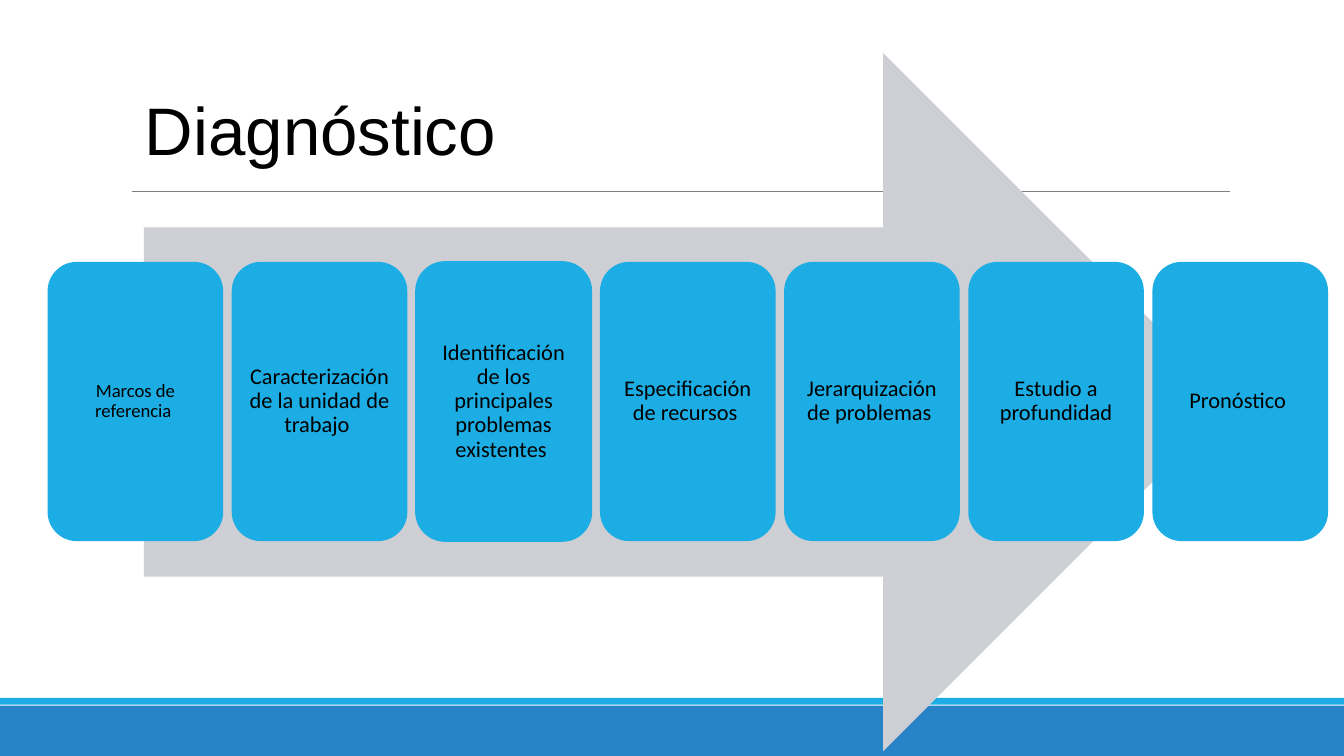
from dataclasses import dataclass

from lxml.etree import SubElement
from pptx import Presentation
from pptx.dml.color import RGBColor
from pptx.enum.shapes import MSO_CONNECTOR, MSO_SHAPE
from pptx.enum.text import MSO_ANCHOR, PP_ALIGN
from pptx.oxml.ns import qn
from pptx.util import Cm, Pt


@dataclass(frozen=True)
class Theme:
    accent: RGBColor = RGBColor(0x1C, 0xAD, 0xE4)
    footer: RGBColor = RGBColor(0x26, 0x83, 0xC6)
    arrow: RGBColor = RGBColor(0xCE, 0xCF, 0xD4)
    rule: RGBColor = RGBColor(0x80, 0x80, 0x80)
    text: RGBColor = RGBColor(0, 0, 0)
    title_font: str = "Arial"
    body_font: str = "Calibri"
    title_size: float = 36
    body_size: float = 12
    small_size: float = 10


@dataclass(frozen=True)
class Box:
    left: float
    top: float
    width: float
    height: float

    def lengths(self) -> tuple:
        return Cm(self.left), Cm(self.top), Cm(self.width), Cm(self.height)


@dataclass(frozen=True)
class Step:
    label: str
    size: float
    outlined: bool = False


THEME = Theme()
SLIDE_WIDTH, SLIDE_HEIGHT = 25.4, 14.29
FIRST_CARD = Box(0.9, 4.95, 3.32, 5.28)
CARD_PITCH = 3.48

STEPS = [
    Step("Marcos de referencia ", THEME.small_size),
    Step("Caracterización de la unidad de trabajo ", THEME.body_size),
    Step("Identificación de los principales problemas existentes ",
         THEME.body_size, outlined=True),
    Step("Especificación de recursos ", THEME.body_size),
    Step("Jerarquización de problemas ", THEME.body_size),
    Step("Estudio a profundidad", THEME.body_size),
    Step("Pronóstico ", THEME.body_size),
]


def apply_format(target, values: dict) -> None:
    for name, value in values.items():
        setattr(target, name, value)


def add_filled_shape(slide, kind, box: Box, color: RGBColor):
    shape = slide.shapes.add_shape(kind, *box.lengths())
    shape.shadow.inherit = False
    shape.fill.solid()
    shape.fill.fore_color.rgb = color
    shape.line.fill.background()
    return shape


def write_text(paragraph, text: str, font_name: str, size: float) -> None:
    run = paragraph.add_run()
    run.text = text
    apply_format(run.font, {"name": font_name, "size": Pt(size)})
    run.font.color.rgb = THEME.text


def add_rule(slide, left: float, right: float, top: float) -> None:
    rule = slide.shapes.add_connector(
        MSO_CONNECTOR.STRAIGHT, Cm(left), Cm(top), Cm(right), Cm(top))
    rule.line.color.rgb = THEME.rule
    rule.line.width = Pt(0.5)
    SubElement(rule._element.spPr, qn("a:effectLst"))


def add_title(slide, text: str, box: Box) -> None:
    title = slide.shapes.add_textbox(*box.lengths())
    title.text_frame.word_wrap = True
    write_text(title.text_frame.paragraphs[0], text,
               THEME.title_font, THEME.title_size)


def add_step_card(slide, step: Step, box: Box) -> None:
    card = add_filled_shape(slide, MSO_SHAPE.ROUNDED_RECTANGLE, box, THEME.accent)
    if step.outlined:
        card.line.color.rgb = THEME.accent
        card.line.width = Pt(0.75)
    margin = Pt(step.size * 0.3)
    apply_format(card.text_frame, {
        "word_wrap": True,
        "vertical_anchor": MSO_ANCHOR.MIDDLE,
        "margin_left": margin,
        "margin_right": margin,
        "margin_top": margin,
        "margin_bottom": margin,
    })
    paragraph = card.text_frame.paragraphs[0]
    apply_format(paragraph, {"alignment": PP_ALIGN.CENTER, "line_spacing": 0.9})
    write_text(paragraph, step.label, THEME.body_font, step.size)


def main() -> None:
    presentation = Presentation()
    apply_format(presentation, {"slide_width": Cm(SLIDE_WIDTH),
                                "slide_height": Cm(SLIDE_HEIGHT)})
    slide = presentation.slides.add_slide(presentation.slide_layouts[6])

    # Footer bands and title rule
    add_filled_shape(slide, MSO_SHAPE.RECTANGLE,
                     Box(0, 13.34, SLIDE_WIDTH, 0.95), THEME.footer)
    add_filled_shape(slide, MSO_SHAPE.RECTANGLE,
                     Box(0, 13.19, SLIDE_WIDTH, 0.13), THEME.accent)
    add_rule(slide, 2.49, 23.24, 3.62)

    # Process arrow behind the step cards
    add_filled_shape(slide, MSO_SHAPE.RIGHT_ARROW,
                     Box(2.72, 1, 20.57, 13.2), THEME.arrow)
    for index, step in enumerate(STEPS):
        left = FIRST_CARD.left + index * CARD_PITCH
        add_step_card(slide, step, Box(left, FIRST_CARD.top,
                                       FIRST_CARD.width, FIRST_CARD.height))

    # Title
    add_title(slide, "Diagnóstico", Box(2.49, 1.55, 11.4, 1.8))

    presentation.save("out.pptx")


if __name__ == "__main__":
    main()
